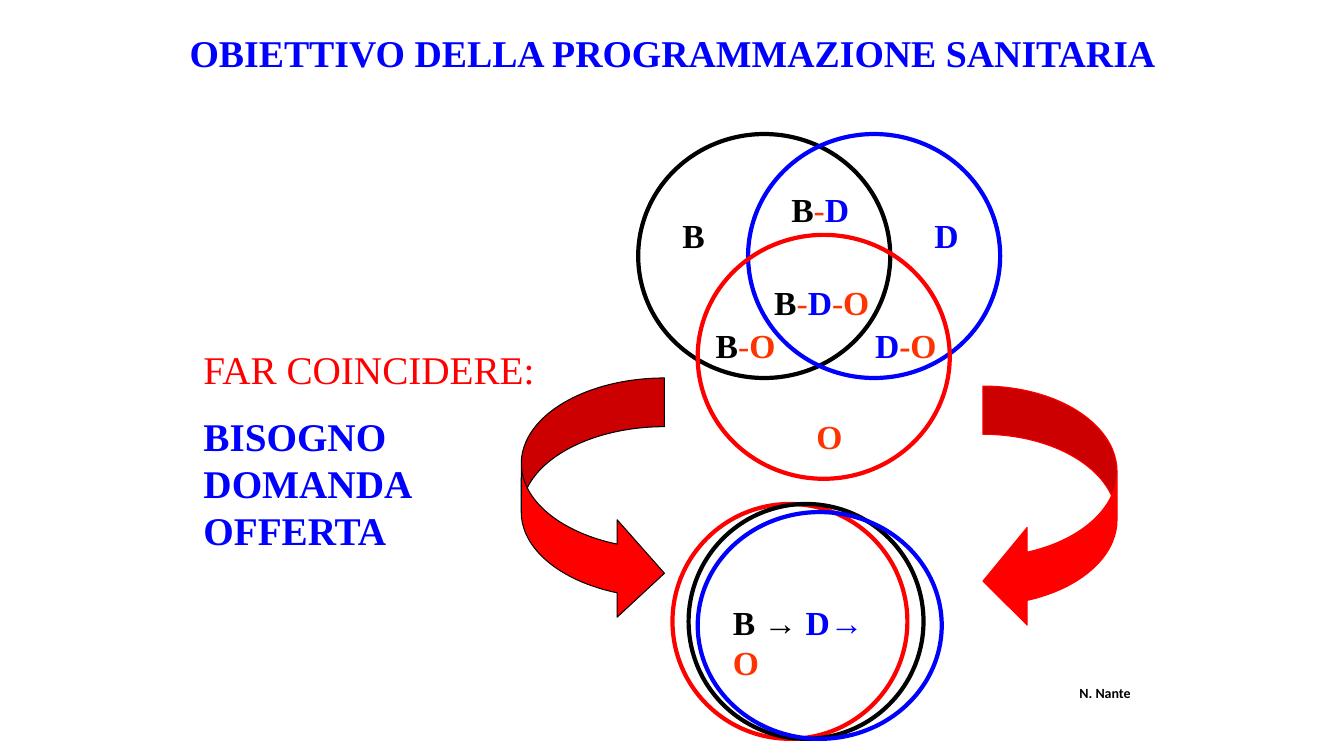
from dataclasses import dataclass

from pptx import Presentation
from pptx.dml.color import RGBColor
from pptx.enum.shapes import MSO_SHAPE
from pptx.enum.text import PP_ALIGN
from pptx.shapes.autoshape import Shape
from pptx.slide import Slide
from pptx.util import Inches, Pt

ELLIPSE = MSO_SHAPE.OVAL
CURVED_ARROW = MSO_SHAPE.CURVED_RIGHT_ARROW
LEFT = PP_ALIGN.LEFT
CENTER = PP_ALIGN.CENTER


@dataclass(frozen=True)
class Theme:
    black: str = "000000"
    blue: str = "0000FF"
    red: str = "FF0000"
    orange: str = "FF3300"
    serif: str = "Times New Roman"
    sans: str = "Calibri"
    title_size: float = 27
    goal_size: float = 28
    label_size: float = 24
    author_size: float = 10
    circle_line: float = 3
    arrow_line: float = 0.75


THEME = Theme()


@dataclass(frozen=True)
class Box:
    left: float
    top: float
    width: float
    height: float


@dataclass(frozen=True)
class Circle:
    box: Box
    color: str


@dataclass(frozen=True)
class Arrow:
    box: Box
    line: str
    adjustments: tuple[float, float, float]
    mirrored: bool = False


@dataclass(frozen=True)
class Span:
    text: str
    color: str
    bold: bool = True


@dataclass(frozen=True)
class Label:
    box: Box
    paragraphs: tuple[tuple[Span, ...], ...]
    size: float = THEME.label_size
    font: str = THEME.serif
    alignment: PP_ALIGN = LEFT
    wrap: bool = True


NEED = Span("B", THEME.black)
DEMAND = Span("D", THEME.blue)
SUPPLY = Span("O", THEME.orange)
HYPHEN = Span("-", THEME.orange, bold=False)
BOLD_HYPHEN = Span("-", THEME.orange)

CIRCLES = (
    Circle(Box(6.33, 1.33, 2.5, 2.42), THEME.black),
    Circle(Box(7.42, 1.33, 2.5, 2.42), THEME.blue),
    Circle(Box(6.92, 2.33, 2.5, 2.42), THEME.red),
    Circle(Box(6.67, 5, 2.33, 2.33), THEME.red),
    Circle(Box(6.83, 5, 2.33, 2.33), THEME.black),
    Circle(Box(6.92, 5.08, 2.42, 2.25), THEME.blue),
)

ARROWS = (
    Arrow(Box(5.17, 3.75, 1.42, 2.42), THEME.black, (0.34, 0.68, 0.33)),
    Arrow(Box(9.75, 3.83, 1.33, 2.42), THEME.red, (0.36, 0.73, 0.33), mirrored=True),
)

LABELS = (
    Label(Box(6.67, 2.08, 0.58, 0.5), ((NEED,),)),
    Label(Box(9.17, 2.08, 0.5, 0.5), ((DEMAND,),)),
    Label(Box(8, 4.08, 0.67, 0.5), ((SUPPLY,),)),
    Label(Box(7, 3.17, 1, 0.5), ((NEED, HYPHEN, SUPPLY),)),
    Label(Box(8.58, 3.17, 0.92, 0.5), ((DEMAND, BOLD_HYPHEN, SUPPLY),)),
    Label(Box(7.75, 1.83, 0.83, 0.5), ((NEED, HYPHEN, DEMAND),)),
    Label(Box(7.58, 2.75, 1.25, 0.5), ((NEED, HYPHEN, DEMAND, HYPHEN, SUPPLY),)),
    Label(
        Box(7.17, 5.92, 1.83, 0.5),
        ((Span("B → ", THEME.black), Span("D→", THEME.blue), Span(" O", THEME.orange)),),
    ),
    Label(
        Box(1.67, 0.25, 10, 0.55),
        ((Span("OBIETTIVO DELLA PROGRAMMAZIONE SANITARIA", THEME.blue),),),
        size=THEME.title_size,
        alignment=CENTER,
    ),
    Label(
        Box(1.92, 3.38, 3.67, 2.2),
        (
            (Span("FAR COINCIDERE:", THEME.red, bold=False),),
            (Span("BISOGNO DOMANDA OFFERTA", THEME.blue),),
        ),
        size=THEME.goal_size,
    ),
    Label(
        Box(10.6, 6.74, 0.72, 0.27),
        ((Span("N. Nante", THEME.black),),),
        size=THEME.author_size,
        font=THEME.sans,
        alignment=CENTER,
        wrap=False,
    ),
)


def rgb(color: str) -> RGBColor:
    return RGBColor.from_string(color)


def place(box: Box) -> tuple[Inches, Inches, Inches, Inches]:
    return Inches(box.left), Inches(box.top), Inches(box.width), Inches(box.height)


def add_outlined_shape(
    slide: Slide, kind: MSO_SHAPE, box: Box, color: str, line_width: float
) -> Shape:
    shape = slide.shapes.add_shape(kind, *place(box))
    shape.shadow.inherit = False
    shape.line.color.rgb = rgb(color)
    shape.line.width = Pt(line_width)
    return shape


def draw_circle(slide: Slide, circle: Circle) -> None:
    shape = add_outlined_shape(slide, ELLIPSE, circle.box, circle.color, THEME.circle_line)
    shape.fill.background()


def draw_arrow(slide: Slide, arrow: Arrow) -> None:
    shape = add_outlined_shape(slide, CURVED_ARROW, arrow.box, arrow.line, THEME.arrow_line)
    shape.fill.solid()
    shape.fill.fore_color.rgb = rgb(THEME.red)
    for index, value in enumerate(arrow.adjustments):
        shape.adjustments[index] = value
    if arrow.mirrored:
        shape._element.spPr.xfrm.set("flipH", "1")


def draw_label(slide: Slide, label: Label) -> None:
    text_frame = slide.shapes.add_textbox(*place(label.box)).text_frame
    text_frame.word_wrap = label.wrap
    for index, spans in enumerate(label.paragraphs):
        paragraph = text_frame.add_paragraph() if index else text_frame.paragraphs[0]
        paragraph.alignment = label.alignment
        if index:
            paragraph.space_before = Pt(label.size / 2)
        for span in spans:
            run = paragraph.add_run()
            run.text = span.text
            run.font.name = label.font
            run.font.size = Pt(label.size)
            run.font.bold = span.bold
            run.font.color.rgb = rgb(span.color)


def main() -> None:
    presentation = Presentation()
    presentation.slide_width = Inches(13.33)
    presentation.slide_height = Inches(7.5)
    slide = presentation.slides.add_slide(presentation.slide_layouts[6])
    for circle in CIRCLES:
        draw_circle(slide, circle)
    for arrow in ARROWS:
        draw_arrow(slide, arrow)
    for label in LABELS:
        draw_label(slide, label)
    presentation.save("out.pptx")


if __name__ == "__main__":
    main()
